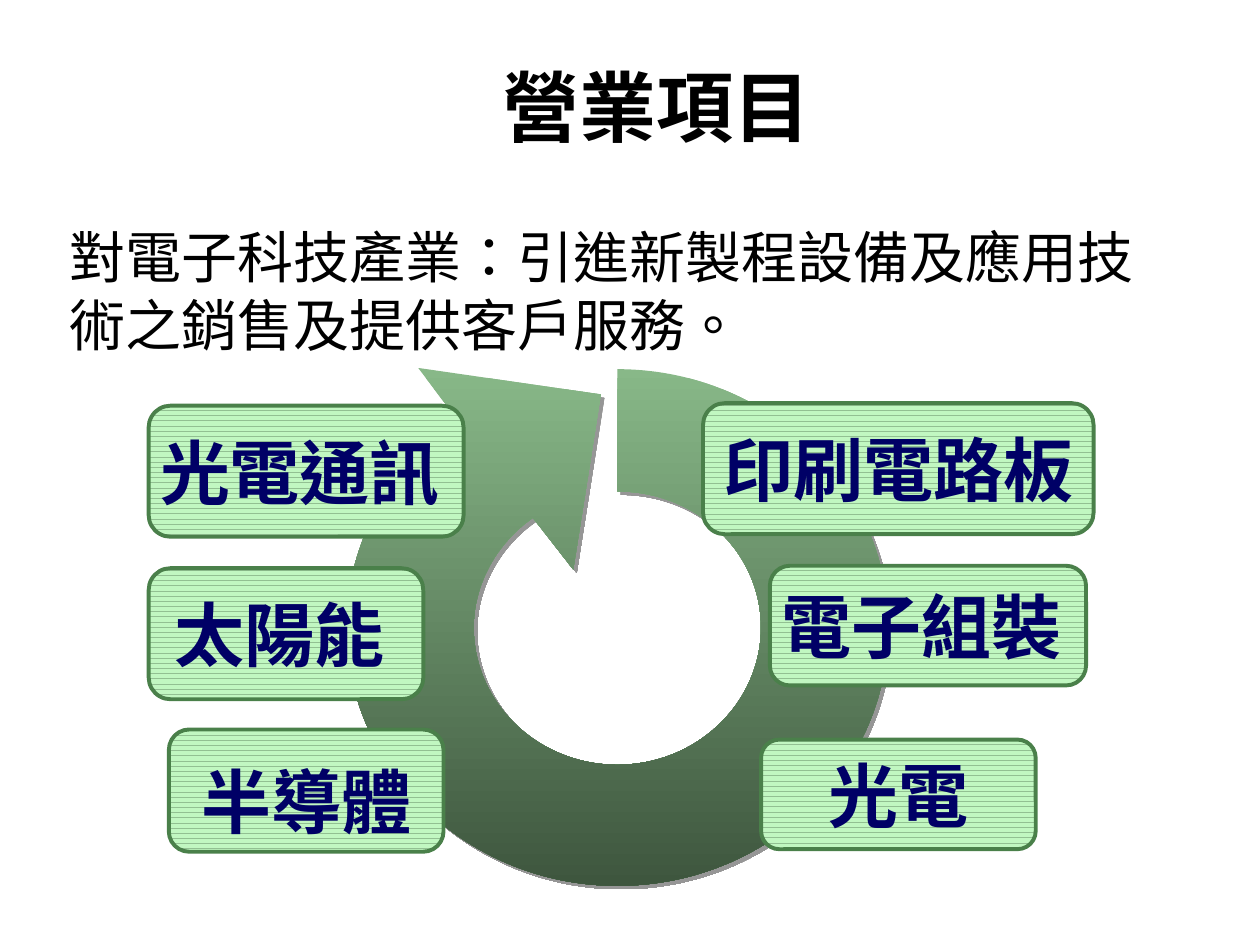
"""Build the business scope slide: a circular arrow with six industry labels."""
import lxml.etree
import pptx
import pptx.dml.color
import pptx.enum.dml
import pptx.enum.lang
import pptx.enum.shapes
import pptx.enum.text
import pptx.oxml.ns
import pptx.util

Inches = pptx.util.Inches
ALIGN = pptx.enum.text.PP_ALIGN
ANCHOR = pptx.enum.text.MSO_ANCHOR
NOTO = "Noto Sans CJK SC"
COLORS = {
    "text": "000000",
    "label": "000066",
    "border": "4A804A",
    "stripe_light": "C1F7C1",
    "stripe_dark": "92C092",
    "arrow_top": "88B888",
    "arrow_bottom": "3E563E",
    "shadow": "969696",
}
LABELS = [
    ("半導體", 1.34, 5.79, 2.18, 0.97, 0.1, 0.21),
    ("光電", 6.04, 5.87, 2.18, 0.87, 0.1, 0.05),
    ("太陽能", 1.18, 4.51, 2.18, 1.04, 0, 0.05),
    ("電子組裝", 6.11, 4.49, 2.51, 0.95, 0, 0.05),
    ("印刷電路板", 5.58, 3.2, 3.1, 1.04, 0.1, 0.05),
    ("光電通訊", 1.18, 3.22, 2.5, 1.04, 0, 0.05),
]
ARROW_START = (4.23, 4.11)
ARROW_SEGMENTS = [
    [(3.94, 4.31), (3.76, 4.64), (3.76, 4.98)],
    [(3.76, 5.58), (4.27, 6.07), (4.9, 6.07)],
    [(5.53, 6.07), (6.04, 5.58), (6.04, 4.98)],
    [(6.04, 4.38), (5.53, 3.9), (4.9, 3.9)],
    [(4.9, 2.93)],
    [(6.09, 2.93), (7.05, 3.85), (7.05, 4.98)],
    [(7.05, 6.11), (6.09, 7.03), (4.9, 7.03)],
    [(3.72, 7.03), (2.75, 6.11), (2.75, 4.98)],
    [(2.75, 4.33), (3.08, 3.72), (3.63, 3.33)],
    [(3.32, 2.92)],
    [(4.77, 3.13)],
    [(4.55, 4.52)],
]


def qn(tag):
    return pptx.oxml.ns.qn(tag)


def rgb(name):
    return pptx.dml.color.RGBColor.from_string(COLORS[name])


def write(tf, text, *, size, font=NOTO, color="text", bold=False,
          align=ALIGN.LEFT, anchor=ANCHOR.TOP, left=0.1, top=0.05):
    tf.word_wrap = True
    tf.vertical_anchor = anchor
    tf.margin_left, tf.margin_right = Inches(left), Inches(0.1)
    tf.margin_top, tf.margin_bottom = Inches(top), Inches(0.05)
    p = tf.paragraphs[0]
    p.alignment = align
    r = p.add_run()
    r.text = text
    r.font.name = font
    r.font.size = pptx.util.Pt(size)
    r.font.bold = bold
    r.font.color.rgb = rgb(color)
    r.font.language_id = pptx.enum.lang.MSO_LANGUAGE_ID.TRADITIONAL_CHINESE
    lxml.etree.SubElement(r.font._element, qn("a:ea"), typeface=font)


def add_text(s, text, x, y, w, h, **fmt):
    sp = s.shapes.add_textbox(Inches(x), Inches(y), Inches(w), Inches(h))
    write(sp.text_frame, text, **fmt)


def add_label(s, text, x, y, w, h, left, top):
    sp = s.shapes.add_shape(pptx.enum.shapes.MSO_SHAPE.ROUNDED_RECTANGLE,
                            Inches(x), Inches(y), Inches(w), Inches(h))
    sp.shadow.inherit = False
    sp.fill.patterned()
    sp.fill.pattern = pptx.enum.dml.MSO_PATTERN.DARK_HORIZONTAL
    sp.fill.fore_color.rgb = rgb("stripe_light")
    sp.fill.back_color.rgb = rgb("stripe_dark")
    sp.line.color.rgb = rgb("border")
    sp.line.width = pptx.util.Pt(2.25)
    write(sp.text_frame, text, size=40, font="Arial", color="label", bold=True,
          align=ALIGN.CENTER, anchor=ANCHOR.MIDDLE, left=left, top=top)


def add_shadow(sp):
    sp.shadow.inherit = False
    effects = sp._element.spPr.find(qn("a:effectLst"))
    shadow = lxml.etree.SubElement(
        effects, qn("a:outerShdw"), dist=str(pptx.util.Pt(2.8)),
        dir="2700000", algn="ctr", rotWithShape="0")
    lxml.etree.SubElement(shadow, qn("a:srgbClr"), val=COLORS["shadow"])


def curve_segments(sp, segments):
    lines = iter(list(sp._element.iter(qn("a:lnTo"))))
    for segment in segments:
        group = [next(lines) for _ in segment]
        if len(group) == 3:
            curve = lxml.etree.Element(qn("a:cubicBezTo"))
            group[0].addprevious(curve)
            for line in group:
                curve.append(line[0])
                line.getparent().remove(line)


def add_circular_arrow(s):
    builder = s.shapes.build_freeform(*map(Inches, ARROW_START))
    points = [(Inches(x), Inches(y)) for seg in ARROW_SEGMENTS for x, y in seg]
    builder.add_line_segments(points, close=True)
    sp = builder.convert_to_shape()
    curve_segments(sp, ARROW_SEGMENTS)
    sp.fill.gradient()
    sp.fill.gradient_angle = 270
    for stop, name in zip(sp.fill.gradient_stops, ("arrow_top", "arrow_bottom")):
        stop.color.rgb = rgb(name)
    sp.line.fill.background()
    add_shadow(sp)


def main():
    prs = pptx.Presentation()
    prs.slide_width, prs.slide_height = Inches(10), Inches(7.5)
    s = prs.slides.add_slide(prs.slide_layouts[6])
    add_text(s, "營業項目", 1.46, 0.42, 7.5, 1.25, size=44, bold=True,
             align=ALIGN.CENTER)
    add_text(s, "對電子科技產業：引進新製程設備及應用技術之銷售及提供客戶服務。",
             0.45, 1.72, 8.91, 1.18, size=32)
    add_circular_arrow(s)
    for label in LABELS:
        add_label(s, *label)
    prs.save("out.pptx")


if __name__ == "__main__":
    main()
